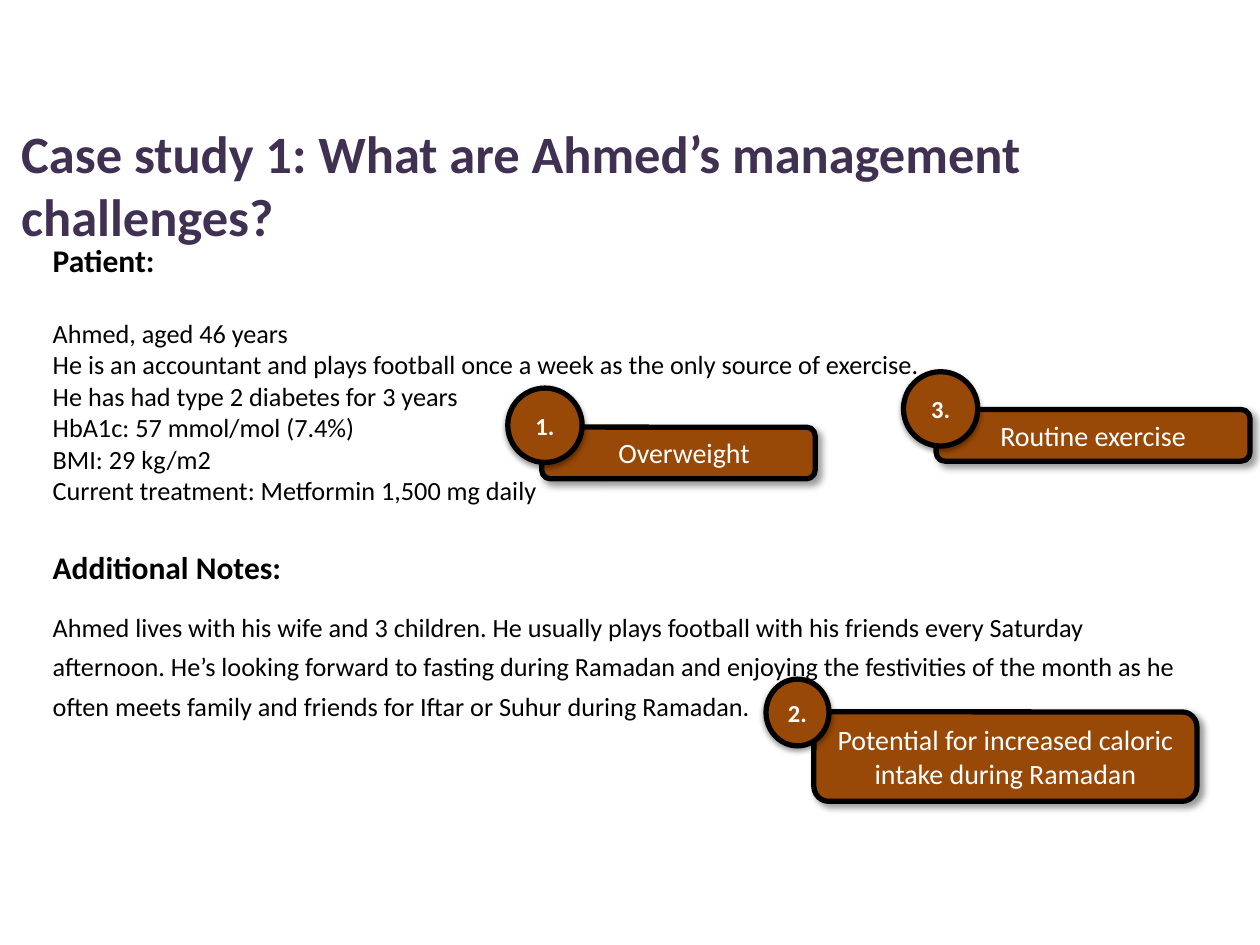
from dataclasses import dataclass

from lxml import etree
from pptx import Presentation
from pptx import util as u
from pptx.dml.color import RGBColor
from pptx.enum import shapes, text
from pptx.oxml.ns import qn

FONT = "Calibri"
BLACK, WHITE, PURPLE, BROWN = "000000", "FFFFFF", "403152", "984807"
LEFT, WIDTH = 0.32, 9.18


@dataclass
class Box:
    left: float
    top: float
    width: float
    height: float

    def lengths(self) -> list:
        return [u.Inches(v) for v in (self.left, self.top, self.width, self.height)]


@dataclass
class Shadow:
    opacity: int
    blur: float
    distance: float
    angle: int


@dataclass
class Challenge:
    number: str
    label: str
    panel: Box
    badge: Box
    indent: float = 0


PANEL_SHADOW = Shadow(40, 4, 3, 45)
BADGE_SHADOW = Shadow(38, 3.1, 1.6, 90)

PATIENT_FACTS = [
    "Ahmed, aged 46 years",
    "He is an accountant and plays football once a week as the only source of exercise.",
    "He has had type 2 diabetes for 3 years",
    "HbA1c: 57 mmol/mol (7.4%)",
    "BMI: 29 kg/m2",
    "Current treatment: Metformin 1,500 mg daily",
]
NOTES = (
    "Ahmed lives with his wife and 3 children. He usually plays football with his "
    "friends every Saturday afternoon. He’s looking forward to fasting during Ramadan "
    "and enjoying the festivities of the month as he often meets family and friends "
    "for Iftar or Suhur during Ramadan."
)
CHALLENGES = [
    Challenge("1.", "Overweight", Box(4.3, 3.39, 2.17, 0.41),
              Box(4.03, 3.08, 0.59, 0.59), indent=0.09),
    Challenge("2.", "Potential for increased caloric intake during Ramadan",
              Box(6.46, 5.65, 3.04, 0.71), Box(6.08, 5.39, 0.5, 0.53)),
    Challenge("3.", "Routine exercise", Box(7.43, 3.25, 2.49, 0.41),
              Box(7.17, 2.95, 0.59, 0.59)),
]


def colour(value: str) -> RGBColor:
    return RGBColor.from_string(value)


def write(paragraph, content: str, *, size: float, color: str = BLACK,
          bold: bool = False, align=text.PP_ALIGN.LEFT, before: float = 0,
          spacing: float = 1.0, indent: float = 0) -> None:
    run = paragraph.add_run()
    run.text = content
    run.font.name = FONT
    run.font.size = u.Pt(size)
    run.font.bold = bold
    run.font.color.rgb = colour(color)
    paragraph.alignment = align
    paragraph.space_before = u.Pt(before)
    paragraph.line_spacing = spacing
    if indent:
        paragraph._p.get_or_add_pPr().set("marL", str(u.Inches(indent)))


def add_frame(slide, box: Box):
    frame = slide.shapes.add_textbox(*box.lengths()).text_frame
    frame.word_wrap = True
    return frame


def add_shadow(shape, shadow: Shadow) -> None:
    shape.shadow.inherit = False
    effects = shape._element.spPr.find(qn("a:effectLst"))
    outer = etree.SubElement(
        effects, qn("a:outerShdw"), blurRad=str(u.Pt(shadow.blur)),
        dist=str(u.Pt(shadow.distance)), dir=str(shadow.angle * 60000),
        algn="tl", rotWithShape="0")
    tint = etree.SubElement(outer, qn("a:srgbClr"), val=BLACK)
    etree.SubElement(tint, qn("a:alpha"), val=str(shadow.opacity * 1000))


def add_label(slide, preset, box: Box, shadow: Shadow, anchor, content: str,
              **text_format) -> None:
    shape = slide.shapes.add_shape(preset, *box.lengths())
    shape.fill.solid()
    shape.fill.fore_color.rgb = colour(BROWN)
    shape.line.color.rgb = colour(BLACK)
    shape.line.width = u.Pt(3)
    add_shadow(shape, shadow)
    frame = shape.text_frame
    frame.word_wrap = True
    frame.vertical_anchor = anchor
    write(frame.paragraphs[0], content, color=WHITE,
          align=text.PP_ALIGN.CENTER, **text_format)


def add_challenge(slide, challenge: Challenge) -> None:
    add_label(slide, shapes.MSO_SHAPE.ROUNDED_RECTANGLE, challenge.panel,
              PANEL_SHADOW, text.MSO_ANCHOR.TOP, challenge.label,
              size=16, indent=challenge.indent)
    add_label(slide, shapes.MSO_SHAPE.OVAL, challenge.badge, BADGE_SHADOW,
              text.MSO_ANCHOR.MIDDLE, challenge.number, size=14, bold=True)


def main() -> None:
    deck = Presentation()
    deck.slide_width, deck.slide_height = u.Inches(10), u.Inches(7.5)
    slide = deck.slides.add_slide(deck.slide_layouts[6])

    # Patient details
    patient = add_frame(slide, Box(LEFT, 1.86, WIDTH, 2.52))
    write(patient.paragraphs[0], "Patient:", size=18, bold=True)
    for index, fact in enumerate(PATIENT_FACTS):
        write(patient.add_paragraph(), fact, size=15, before=0 if index else 22)

    # Additional notes
    notes = add_frame(slide, Box(LEFT, 4.74, WIDTH, 1.05))
    write(notes.paragraphs[0], NOTES, size=15, spacing=1.25)
    notes_heading = add_frame(slide, Box(LEFT, 4.3, 5.3, 0.4))
    write(notes_heading.paragraphs[0], "Additional Notes:", size=18, bold=True)

    # Title
    title = add_frame(slide, Box(0.07, 0.91, 9.85, 1.11))
    write(title.paragraphs[0], "Case study 1: What are Ahmed’s management challenges?",
          size=30, color=PURPLE, bold=True)

    # Numbered challenges
    for challenge in CHALLENGES:
        add_challenge(slide, challenge)

    deck.save("out.pptx")


if __name__ == "__main__":
    main()
